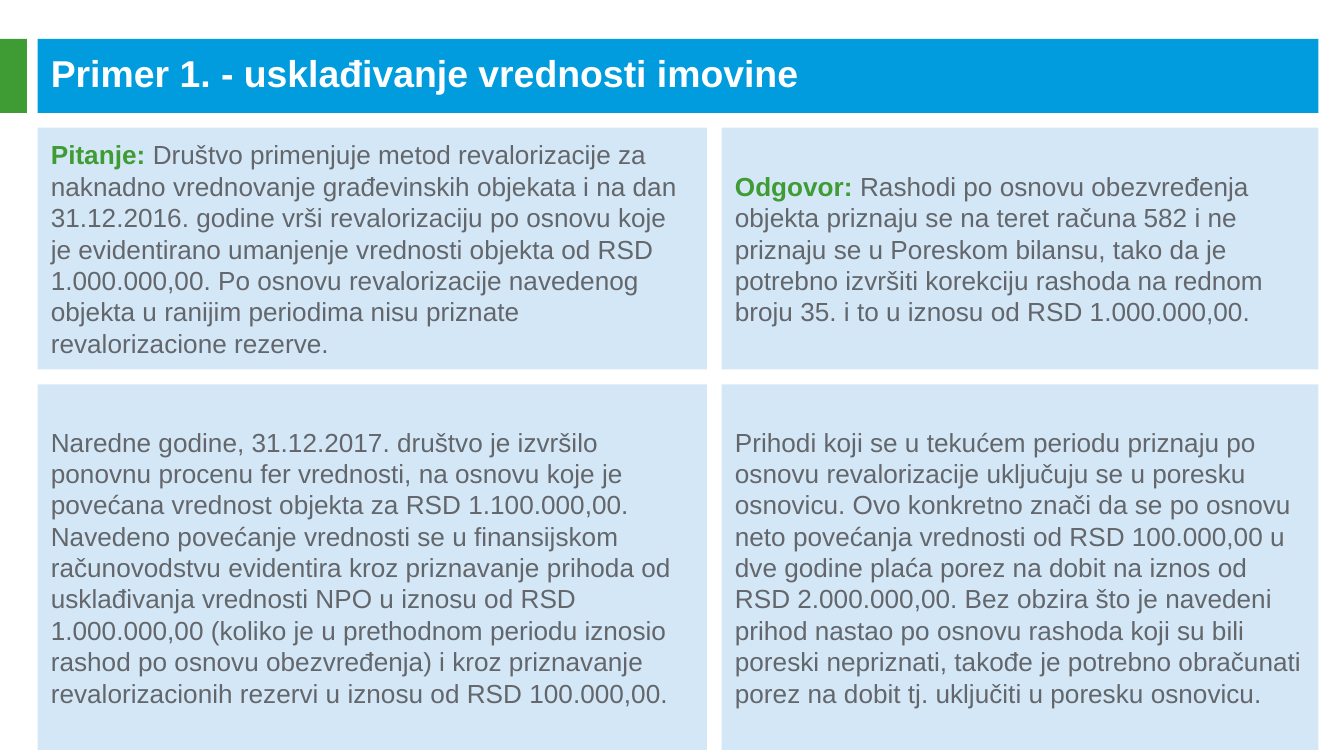
from pptx import Presentation
from pptx.dml.color import RGBColor
from pptx.enum.shapes import MSO_SHAPE
from pptx.enum.text import MSO_ANCHOR, PP_ALIGN
from pptx.util import Inches, Pt

BLUE, GREEN, PALE, GRAY, WHITE = "009CDE", "3F9C35", "D4E7F7", "63666A", "FFFFFF"

TITLE = "Primer 1. - usklađivanje vrednosti imovine"
CELLS = [
    [
        ("Pitanje: ", "Društvo primenjuje metod revalorizacije za naknadno vrednovanje "
         "građevinskih objekata i na dan 31.12.2016. godine vrši revalorizaciju po osnovu "
         "koje je evidentirano umanjenje vrednosti objekta od RSD 1.000.000,00. Po osnovu "
         "revalorizacije navedenog objekta u ranijim periodima nisu priznate "
         "revalorizacione rezerve."),
        ("Odgovor: ", "Rashodi po osnovu obezvređenja objekta priznaju se na teret računa "
         "582 i ne priznaju se u Poreskom bilansu, tako da je potrebno izvršiti korekciju "
         "rashoda na rednom broju 35. i to u iznosu od RSD 1.000.000,00."),
    ],
    [
        ("", "Naredne godine, 31.12.2017. društvo je izvršilo ponovnu procenu fer "
         "vrednosti, na osnovu koje je povećana vrednost objekta za RSD 1.100.000,00. "
         "Navedeno povećanje vrednosti se u finansijskom računovodstvu evidentira kroz "
         "priznavanje prihoda od usklađivanja vrednosti NPO u iznosu od RSD 1.000.000,00 "
         "(koliko je u prethodnom periodu iznosio rashod po osnovu obezvređenja) i kroz "
         "priznavanje revalorizacionih rezervi u iznosu od RSD 100.000,00."),
        ("", "Prihodi koji se u tekućem periodu priznaju po osnovu revalorizacije uključuju "
         "se u poresku osnovicu. Ovo konkretno znači da se po osnovu neto povećanja "
         "vrednosti od RSD 100.000,00 u dve godine plaća porez na dobit na iznos od RSD "
         "2.000.000,00. Bez obzira što je navedeni prihod nastao po osnovu rashoda koji su "
         "bili poreski nepriznati, takođe je potrebno obračunati porez na dobit tj. "
         "uključiti u poresku osnovicu."),
    ],
]

LEFT, TOP, GAP = 0.28, 0.95, 0.11
WIDTHS, HEIGHTS = (4.98, 4.44), (1.8, 2.72)
BAR_TOP, BAR_HIGH = 0.29, 0.55


def color(code):
    return RGBColor.from_string(code)


def add_rect(slide, x, y, wide, high, fill):
    rect = slide.shapes.add_shape(
        MSO_SHAPE.RECTANGLE, Inches(x), Inches(y), Inches(wide), Inches(high))
    rect.shadow.inherit = False
    rect.fill.solid()
    rect.fill.fore_color.rgb = color(fill)
    rect.line.fill.background()
    return rect


def add_text(shape, text, size=14, fill=GRAY, bold=False):
    frame = shape.text_frame
    frame.word_wrap = True
    frame.vertical_anchor = MSO_ANCHOR.MIDDLE
    para = frame.paragraphs[0]
    para.alignment = PP_ALIGN.LEFT
    run = para.add_run()
    run.text = text
    run.font.name = "Arial"
    run.font.size = Pt(size)
    run.font.bold = bold
    run.font.color.rgb = color(fill)


deck = Presentation()
deck.slide_width = Inches(10)
deck.slide_height = deck.slide_width * 9 // 16
slide = deck.slides.add_slide(deck.slide_layouts[6])

add_rect(slide, LEFT, BAR_TOP, sum(WIDTHS) + GAP, BAR_HIGH, BLUE)
add_rect(slide, 0, BAR_TOP, 0.2, BAR_HIGH, GREEN)
title = slide.shapes.add_textbox(Inches(LEFT), Inches(0.39), Inches(9.36), Inches(0.3))
add_text(title, TITLE, size=20, fill=WHITE, bold=True)

y = TOP
for row, high in zip(CELLS, HEIGHTS):
    x = LEFT
    for (label, body), wide in zip(row, WIDTHS):
        cell = add_rect(slide, x, y, wide, high, PALE)
        if label:
            add_text(cell, label, fill=GREEN, bold=True)
        add_text(cell, body)
        x += wide + GAP
    y += high + GAP

deck.save("out.pptx")
